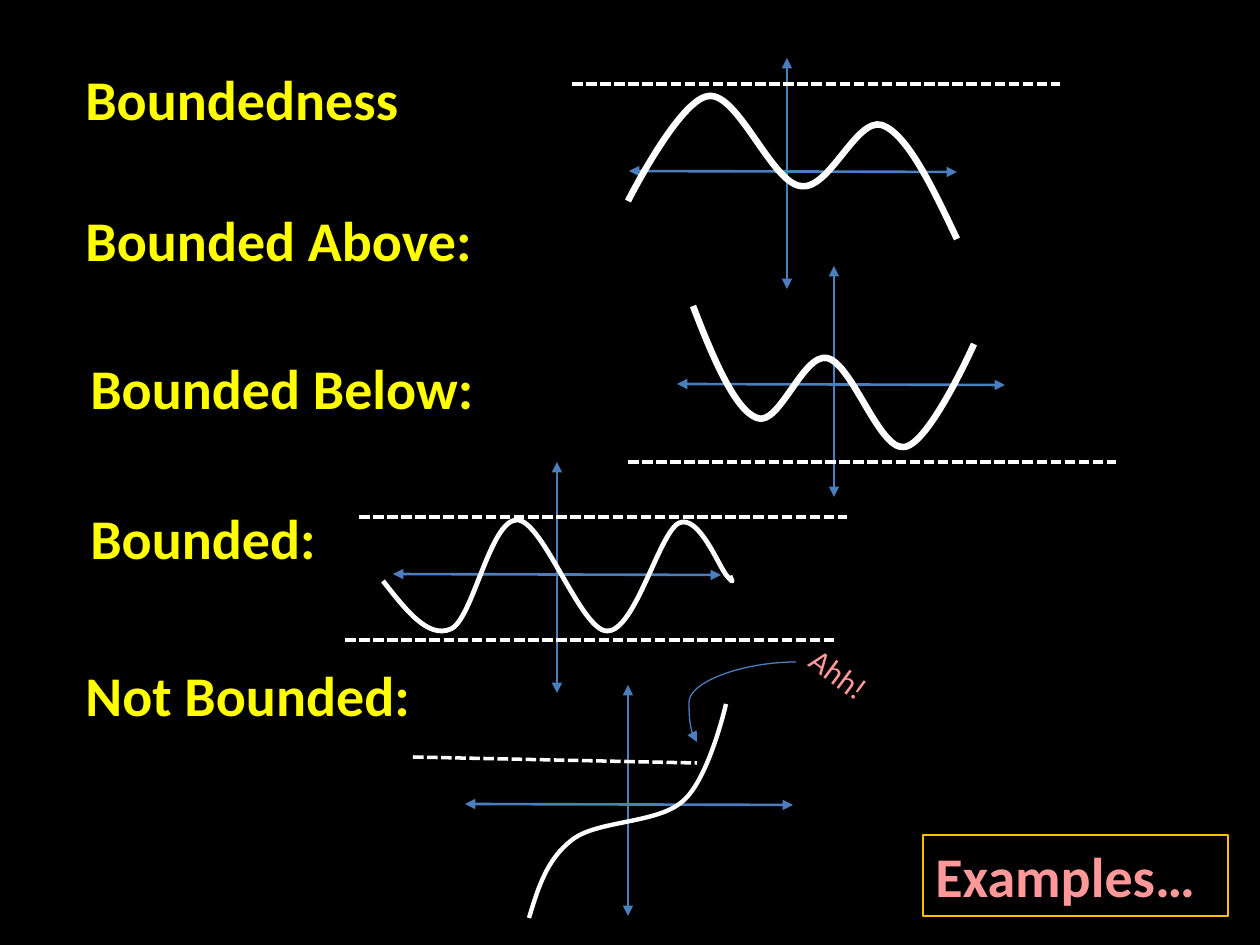
"""Build the slide on boundedness of functions."""
from dataclasses import dataclass

import pptx
import pptx.dml.color
import pptx.enum.dml
import pptx.enum.shapes
import pptx.enum.text
import pptx.oxml
import pptx.oxml.ns
import pptx.util

EMU_PER_PX = 914400 / 126
AXIS_HEIGHT, AXIS_WIDTH = 231, 328
WHITE, YELLOW, PINK, BLUE, GOLD = "FFFFFF", "FFFF00", "FF9999", "4B7EBC", "FFC000"
qn = pptx.oxml.ns.qn


@dataclass
class Label:
    """A text with its box, colour, size and optional border."""
    text: str
    left: int
    top: int
    width: int = 1206
    height: int = 81
    color: str = YELLOW
    size: int = 32
    bold: bool = True
    border: str = ""
    rotation: float = 0


@dataclass
class Axes:
    """The top of a vertical axis and the left end of a horizontal one."""
    vertical: tuple[int, int]
    horizontal: tuple[int, int]


@dataclass
class Curve:
    """A chain of Bezier segments: a start, then three points for each segment."""
    width: float
    points: list[tuple[int, int]]


@dataclass
class Bound:
    """A dashed line between two points."""
    start: tuple[int, int]
    end: tuple[int, int]


HEADINGS = [
    Label("Boundedness", 73, 58, width=1111),
    Label("Bounded Above:", 73, 199),
    Label("Bounded Below:", 78, 347),
    Label("Bounded:", 78, 497),
    Label("Not Bounded:", 73, 654),
    Label("Examples…", 923, 835, width=305, color=PINK, border=GOLD),
]
EXCLAMATION = Label("Ahh!", 786, 679, 189, 50, PINK, 18, bold=False, rotation=36.4)
AXES = [
    Axes((787, 58), (629, 171)),
    Axes((834, 266), (677, 384)),
    Axes((557, 462), (393, 574)),
    Axes((628, 685), (465, 804)),
]
CURVES = [
    Curve(3.75, [(957, 239), (932, 186), (907, 134), (882, 125), (856, 117),
                 (829, 192), (800, 186), (771, 181), (738, 93), (709, 96),
                 (680, 98), (628, 201), (628, 201)]),
    Curve(3.75, [(693, 306), (713, 358), (735, 410), (757, 418), (779, 427),
                 (803, 353), (827, 358), (852, 363), (879, 450), (904, 447),
                 (929, 445), (974, 344), (974, 344)]),
    Curve(2.75, [(383, 581), (406, 610), (428, 639), (451, 629), (473, 619),
                 (490, 520), (517, 520), (543, 520), (581, 631), (607, 631),
                 (635, 632), (659, 533), (679, 523), (699, 514), (719, 567),
                 (727, 576), (735, 585), (732, 581), (730, 576)]),
    Curve(2.5, [(529, 918), (538, 888), (547, 859), (572, 840), (597, 820),
                (658, 824), (683, 801), (709, 779), (726, 704), (726, 704)]),
]
BOUNDS = [
    Bound((572, 84), (1060, 84)),
    Bound((628, 462), (1116, 462)),
    Bound((359, 517), (847, 517)),
    Bound((345, 640), (834, 640)),
    Bound((413, 757), (697, 763)),
]


def px(length: int) -> int:
    """Turn pixels into EMU."""
    return round(length * EMU_PER_PX)


def rgb(color: str) -> pptx.dml.color.RGBColor:
    """Turn a hex string into a colour."""
    return pptx.dml.color.RGBColor.from_string(color)


def style_line(line, color: str, width: float) -> None:
    """Set the colour and the width in points of a line."""
    line.color.rgb = rgb(color)
    line.width = pptx.util.Pt(width)


def draw_label(slide, label: Label) -> None:
    """Draw a text, in a rectangle if it has a border."""
    box = px(label.left), px(label.top), px(label.width), px(label.height)
    if label.border:
        shape = slide.shapes.add_shape(pptx.enum.shapes.MSO_SHAPE.RECTANGLE, *box)
        shape.shadow.inherit = False
        shape.fill.background()
        style_line(shape.line, label.border, 0.75)
    else:
        shape = slide.shapes.add_textbox(*box)
    shape.rotation = label.rotation
    frame = shape.text_frame
    frame.word_wrap = True
    frame.auto_size = pptx.enum.text.MSO_AUTO_SIZE.SHAPE_TO_FIT_TEXT
    frame.vertical_anchor = pptx.enum.text.MSO_ANCHOR.TOP
    paragraph = frame.paragraphs[0]
    paragraph.alignment = pptx.enum.text.PP_ALIGN.LEFT
    run = paragraph.add_run()
    run.text = label.text
    run.font.name = "Calibri"
    run.font.size = pptx.util.Pt(label.size)
    run.font.bold = label.bold
    run.font.color.rgb = rgb(label.color)


def draw_connector(slide, start: tuple[int, int], end: tuple[int, int], color: str,
                   width: float, arrows: tuple[str, ...] = (), kind: str = "STRAIGHT"):
    """Draw a connector without a shadow, with arrowheads at the named ends."""
    connector = slide.shapes.add_connector(
        pptx.enum.shapes.MSO_CONNECTOR[kind], *map(px, start + end))
    style_line(connector.line, color, width)
    properties = connector._element.spPr
    for arrow in arrows:
        head = pptx.oxml.parse_xml(
            f'<a:{arrow} {pptx.oxml.ns.nsdecls("a")} type="triangle"/>')
        properties.find(qn("a:ln")).append(head)
    properties.append(pptx.oxml.parse_xml(f'<a:effectLst {pptx.oxml.ns.nsdecls("a")}/>'))
    return connector


def draw_axes(slide, axes: Axes) -> None:
    """Draw a pair of axes with arrowheads at all ends."""
    x, top = axes.vertical
    left, y = axes.horizontal
    for start, end in (((x, top), (x, top + AXIS_HEIGHT)),
                       ((left, y), (left + AXIS_WIDTH, y + 1))):
        draw_connector(slide, start, end, BLUE, 1.5, ("headEnd", "tailEnd"))


def draw_curve(slide, curve: Curve) -> None:
    """Draw a freeform and join its points in threes into Bezier segments."""
    builder = slide.shapes.build_freeform(*curve.points[0], scale=EMU_PER_PX)
    builder.add_line_segments(curve.points[1:], close=False)
    shape = builder.convert_to_shape()
    shape.shadow.inherit = False
    shape.fill.background()
    style_line(shape.line, WHITE, curve.width)
    outline = next(shape._element.iter(qn("a:path")))
    segments = outline.findall(qn("a:lnTo"))
    for index in range(0, len(segments), 3):
        bezier = outline.makeelement(qn("a:cubicBezTo"))
        outline.append(bezier)
        for segment in segments[index:index + 3]:
            bezier.append(segment[0])
            outline.remove(segment)


def draw_bound(slide, bound: Bound) -> None:
    """Draw a dashed bound."""
    connector = draw_connector(slide, bound.start, bound.end, WHITE, 2)
    connector.line.dash_style = pptx.enum.dml.MSO_LINE.SQUARE_DOT


def draw_pointer(slide) -> None:
    """Draw the curved arrow from the exclamation to the unbounded graph."""
    pointer = draw_connector(slide, (796, 662), (697, 742), BLUE, 0.75, ("tailEnd",), "CURVE")
    guides = next(pointer._element.iter(qn("a:prstGeom"))).get_or_add_avLst()
    guides.append(pptx.oxml.parse_xml(
        f'<a:gd {pptx.oxml.ns.nsdecls("a")} name="adj1" fmla="val 108000"/>'))


def main() -> None:
    """Build and save the presentation."""
    presentation = pptx.Presentation()
    presentation.slide_width, presentation.slide_height = px(1260), px(945)
    slide = presentation.slides.add_slide(presentation.slide_layouts[6])
    slide.background.fill.solid()
    slide.background.fill.fore_color.rgb = rgb("000000")
    for draw, items in ((draw_label, HEADINGS), (draw_axes, AXES), (draw_curve, CURVES),
                        (draw_bound, BOUNDS), (draw_label, [EXCLAMATION])):
        for item in items:
            draw(slide, item)
    draw_pointer(slide)
    presentation.save("out.pptx")


if __name__ == "__main__":
    main()
